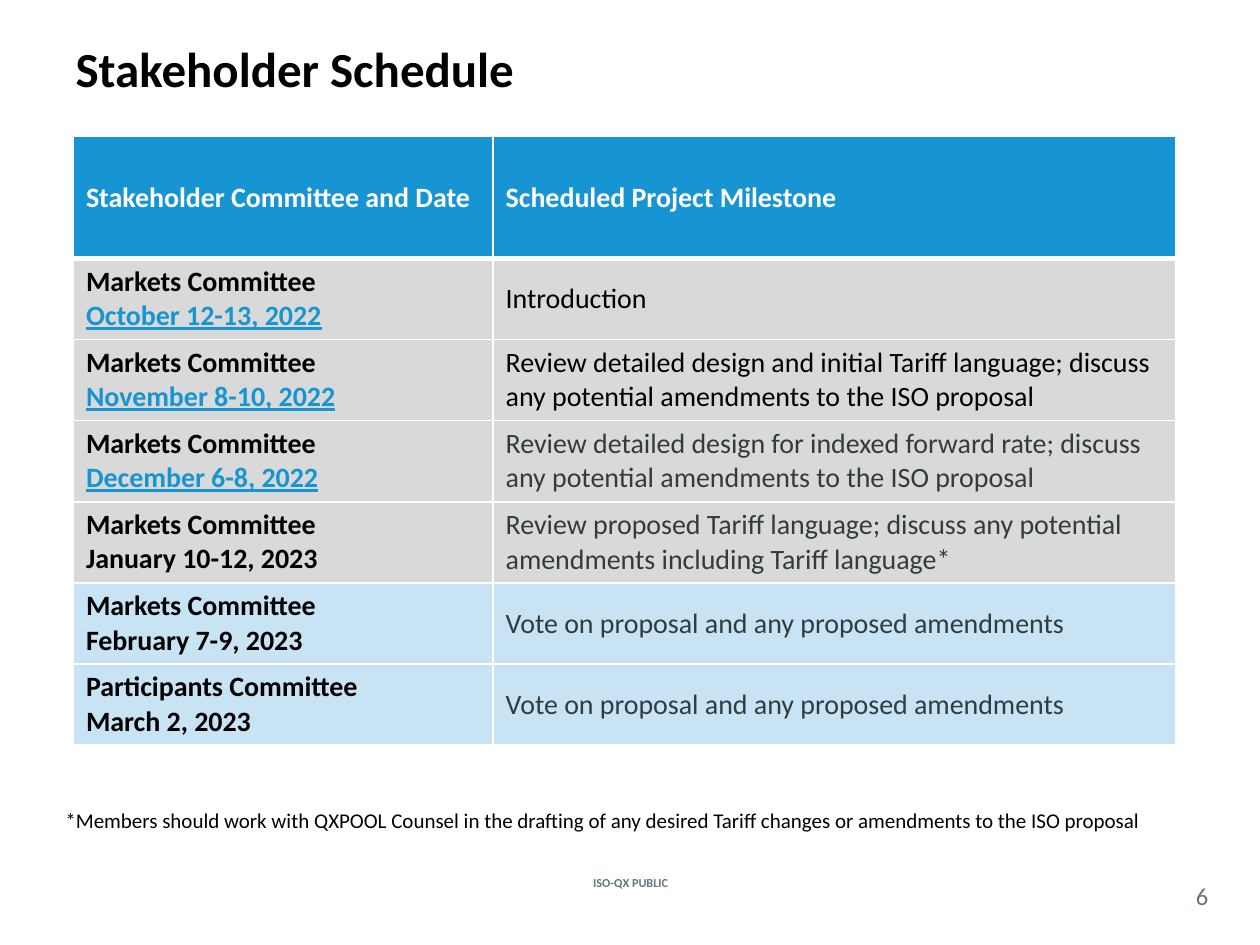
from lxml import etree
from pptx import Presentation
from pptx.dml.color import RGBColor
from pptx.enum.text import MSO_ANCHOR, PP_ALIGN
from pptx.oxml.ns import qn
from pptx.util import Cm, Pt

MIDDLE, TOP = MSO_ANCHOR.MIDDLE, MSO_ANCHOR.TOP
LEFT, CENTER = PP_ALIGN.LEFT, PP_ALIGN.CENTER
BLACK = RGBColor(0x00, 0x00, 0x00)
WHITE = RGBColor(0xFF, 0xFF, 0xFF)
BLUE = RGBColor(0x17, 0x95, 0xD2)
PALE_BLUE = RGBColor(0xC8, 0xE3, 0xF4)
GREY = RGBColor(0xD9, 0xD9, 0xD9)
SLATE = RGBColor(0x31, 0x3C, 0x3F)
MUTED = RGBColor(0x62, 0x77, 0x7F)

VOTE = "Vote on proposal and any proposed amendments"
MILESTONES = [
    ("Markets Committee", "October 12-13, 2022", True, "Introduction", BLACK, GREY),
    ("Markets Committee", "November 8-10, 2022", True,
     "Review detailed design and initial Tariff language; discuss any potential "
     "amendments to the ISO proposal", BLACK, GREY),
    ("Markets Committee", "December 6-8, 2022", True,
     "Review detailed design for indexed forward rate; discuss any potential "
     "amendments to the ISO proposal", SLATE, GREY),
    ("Markets Committee", "January 10-12, 2023", False,
     "Review proposed Tariff language; discuss any potential amendments "
     "including Tariff language*", SLATE, GREY),
    ("Markets Committee", "February 7-9, 2023", False, VOTE, SLATE, PALE_BLUE),
    ("Participants Committee", "March 2, 2023", False, VOTE, SLATE, PALE_BLUE),
]


def write(p, text, size, color, bold=False, align=LEFT):
    p.text = text
    p.alignment = align
    p.font.name = "Calibri"
    p.font.size = Pt(size)
    p.font.bold = bold
    p.font.color.rgb = color


def style_cell(cell, fill, anchor, top, bottom):
    cell.vertical_anchor = anchor
    tc_pr = cell._tc.get_or_add_tcPr()
    for side, width in (("L", 1), ("R", 1), ("T", top), ("B", bottom)):
        ln = etree.SubElement(tc_pr, qn(f"a:ln{side}"), w=str(Pt(width)))
        solid = etree.SubElement(ln, qn("a:solidFill"))
        etree.SubElement(solid, qn("a:srgbClr"), val=str(WHITE))
    cell.fill.solid()
    cell.fill.fore_color.rgb = fill


prs = Presentation()
prs.slide_width, prs.slide_height = Cm(25.4), Cm(19.05)
s = prs.slides.add_slide(prs.slide_layouts[5])

title = s.shapes.title
title.left, title.top, title.width, title.height = Cm(1.27), Cm(0.64), Cm(22.86), Cm(1.47)
title.text_frame.vertical_anchor = MIDDLE
write(title.text_frame.paragraphs[0], "Stakeholder Schedule", 28, BLACK, True)

table = s.shapes.add_table(len(MILESTONES) + 1, 2, Cm(1.48), Cm(2.75), Cm(22.23), Cm(12.25)).table
table.columns[0].width, table.columns[1].width = Cm(8.46), Cm(13.77)
table.rows[0].height = Cm(2.46)

for col, heading in enumerate(("Stakeholder Committee and Date", "Scheduled Project Milestone")):
    cell = table.cell(0, col)
    write(cell.text_frame.paragraphs[0], heading, 16, WHITE, True)
    style_cell(cell, BLUE, MIDDLE, 1, 3)

for row, (committee, date, linked, milestone, color, fill) in enumerate(MILESTONES, 1):
    table.rows[row].height = Cm(1.63)
    top = 3 if row == 1 else 1
    cell = table.cell(row, 0)
    tf = cell.text_frame
    write(tf.paragraphs[0], committee, 16, BLACK, True)
    p = tf.add_paragraph()
    write(p, date, 16, BLUE if linked else BLACK, True)
    p.font.underline = linked
    style_cell(cell, fill, TOP, top, 1)
    cell = table.cell(row, 1)
    write(cell.text_frame.paragraphs[0], milestone, 16, color)
    style_cell(cell, fill, MIDDLE, top, 1)

NOTES = [
    ("*Members should work with QXPOOL Counsel in the drafting of any desired Tariff "
     "changes or amendments to the ISO proposal",
     1.07, 16.15, 23.5, 0.76, 12, BLACK, False, LEFT, TOP),
    ("ISO-QX PUBLIC", 10.85, 17.58, 3.73, 0.43, 7, MUTED, True, CENTER, MIDDLE),
    ("6", 23.7, 17.68, 1.07, 0.74, 14, MUTED, False, CENTER, MIDDLE),
]
for text, x, y, w, h, size, color, bold, align, anchor in NOTES:
    tf = s.shapes.add_textbox(Cm(x), Cm(y), Cm(w), Cm(h)).text_frame
    tf.word_wrap = True
    tf.vertical_anchor = anchor
    write(tf.paragraphs[0], text, size, color, bold, align)

prs.save("out.pptx")
